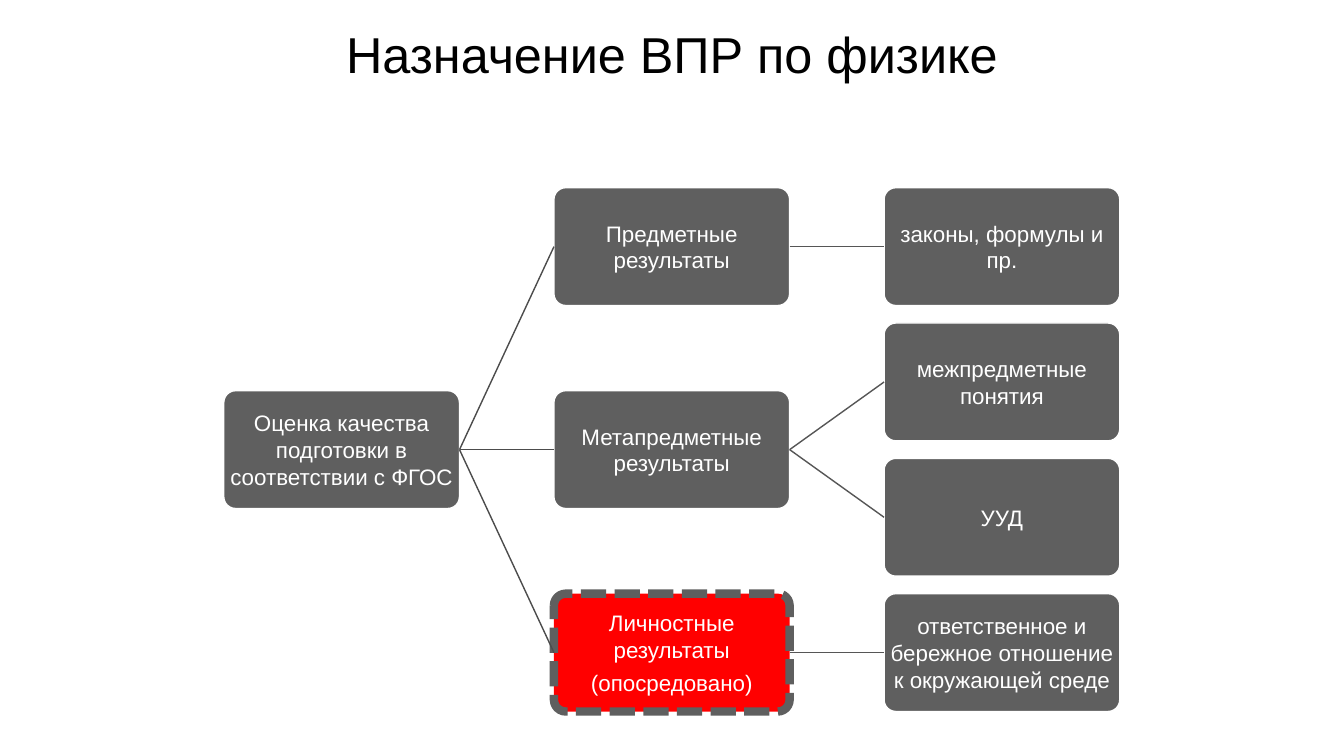
from lxml import etree
from pptx import Presentation
from pptx.dml.color import RGBColor
from pptx.enum.dml import MSO_LINE
from pptx.enum.shapes import MSO_CONNECTOR, MSO_SHAPE
from pptx.enum.text import MSO_ANCHOR, MSO_AUTO_SIZE, PP_ALIGN
from pptx.oxml.ns import qn
from pptx.util import Cm, Pt

ROUNDED = MSO_SHAPE.ROUNDED_RECTANGLE
STRAIGHT = MSO_CONNECTOR.STRAIGHT
DASHED = MSO_LINE.SQUARE_DOT
MIDDLE = MSO_ANCHOR.MIDDLE
CENTER = PP_ALIGN.CENTER
NO_AUTOFIT = MSO_AUTO_SIZE.NONE

BLACK = RGBColor(0x00, 0x00, 0x00)
WHITE = RGBColor(0xFF, 0xFF, 0xFF)
GRAY = RGBColor(0x5F, 0x5F, 0x5F)
RED = RGBColor(0xFF, 0x00, 0x00)
ROOT_LINK = RGBColor(0x4C, 0x4C, 0x4C)
RESULT_LINK = RGBColor(0x56, 0x56, 0x56)

LEFT_SIDE, RIGHT_SIDE = 1, 3
TREE_LEFT, TREE_TOP = 5.64, 4.73
COLUMN_STEP, ROW_STEP = 8.32, 3.41
BOX_WIDTH, BOX_HEIGHT = 5.94, 2.97

ASSESSMENT = "Оценка качества подготовки в соответствии с ФГОС"
RESULTS = [
    (0, ["Предметные результаты"], {}, [(0, "законы, формулы и пр.")]),
    (1.5, ["Метапредметные результаты"], {},
     [(1, "межпредметные понятия"), (2, "УУД")]),
    (3, ["Личностные результаты", "(опосредовано)"],
     {"fill": RED, "line": GRAY, "line_width": 6, "dash": DASHED},
     [(3, "ответственное и бережное отношение к окружающей среде")]),
]


def write_text(frame, paragraphs, font="Arial", size=16, color=WHITE, gap=5):
    frame.word_wrap = True
    frame.auto_size = NO_AUTOFIT
    frame.vertical_anchor = MIDDLE
    for index, text in enumerate(paragraphs):
        paragraph = frame.add_paragraph() if index else frame.paragraphs[0]
        paragraph.text = text
        paragraph.alignment = CENTER
        paragraph.space_before = Pt(gap if index else 0)
        paragraph.font.name = font
        paragraph.font.size = Pt(size)
        paragraph.font.color.rgb = color


class TreeSlide:
    def __init__(self, presentation):
        self.slide = presentation.slides.add_slide(presentation.slide_layouts[5])

    def title(self, text):
        heading = self.slide.shapes.title
        heading.left, heading.top = Cm(1.7), Cm(0.53)
        heading.width, heading.height = Cm(30.48), Cm(1.63)
        write_text(heading.text_frame, [text], size=36, color=BLACK)

    def box(self, column, row, paragraphs, fill=GRAY, line=WHITE,
            line_width=1, dash=None):
        node = self.slide.shapes.add_shape(
            ROUNDED,
            Cm(TREE_LEFT + column * COLUMN_STEP), Cm(TREE_TOP + row * ROW_STEP),
            Cm(BOX_WIDTH), Cm(BOX_HEIGHT))
        node.adjustments[0] = 0.1
        node.shadow.inherit = False
        node.fill.solid()
        node.fill.fore_color.rgb = fill
        node.line.color.rgb = line
        node.line.width = Pt(line_width)
        if dash is not None:
            node.line.dash_style = dash
        frame = node.text_frame
        frame.margin_left = frame.margin_right = Cm(0.03)
        frame.margin_top = frame.margin_bottom = Cm(0.03)
        write_text(frame, paragraphs)
        return node

    def link(self, parent, child, color):
        branch = self.slide.shapes.add_connector(STRAIGHT, 0, 0, 0, 0)
        branch.begin_connect(parent, RIGHT_SIDE)
        branch.end_connect(child, LEFT_SIDE)
        branch.line.color.rgb = color
        branch.line.width = Pt(1)
        etree.SubElement(branch._element.spPr, qn("a:effectLst"))


def main():
    presentation = Presentation()
    presentation.slide_width, presentation.slide_height = Cm(33.87), Cm(19.05)
    tree = TreeSlide(presentation)
    tree.title("Назначение ВПР по физике")
    assessment = tree.box(0, 1.5, [ASSESSMENT])
    for row, paragraphs, style, details in RESULTS:
        result = tree.box(1, row, paragraphs, **style)
        tree.link(assessment, result, ROOT_LINK)
        for detail_row, text in details:
            detail = tree.box(2, detail_row, [text])
            tree.link(result, detail, RESULT_LINK)
    presentation.save("out.pptx")


if __name__ == "__main__":
    main()
